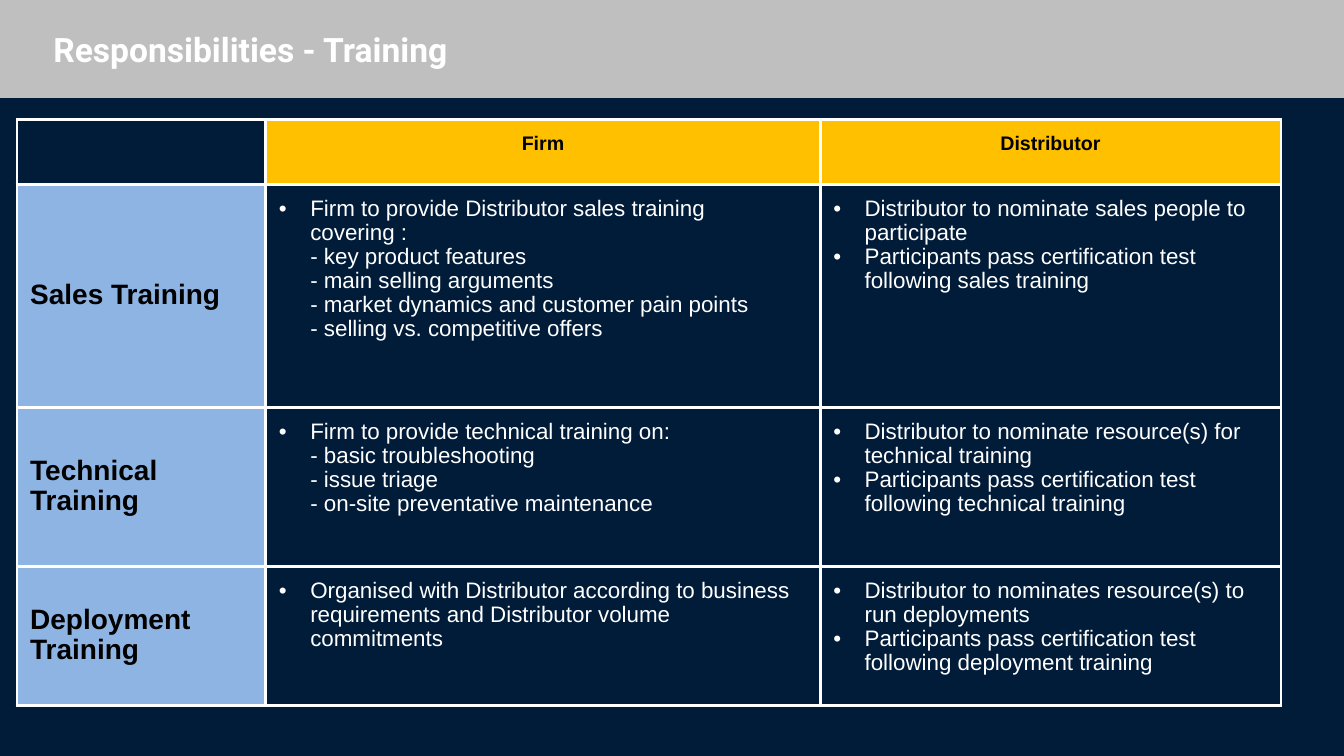
from copy import deepcopy
from pptx import Presentation
from pptx.dml.color import RGBColor
from pptx.enum.shapes import MSO_SHAPE as Shape
from pptx.enum.text import MSO_ANCHOR as Anchor, PP_ALIGN as Align
from pptx.oxml import parse_xml
from pptx.oxml.ns import nsdecls, qn
from pptx.util import Cm, Pt

TITLE = "Responsibilities - Training"
HEADINGS = ["", "Firm", "Distributor"]
TRAININGS = [
    ("Sales Training",
     ["Firm to provide Distributor sales training covering :\v- key product features"
      "\v- main selling arguments\v- market dynamics and customer pain points"
      "\v- selling vs. competitive offers"],
     ["Distributor to nominate sales people to participate",
      "Participants pass certification test following sales training"]),
    ("Technical Training",
     ["Firm to provide technical training on:\v- basic troubleshooting"
      "\v- issue triage\v- on-site preventative maintenance"],
     ["Distributor to nominate resource(s) for technical training",
      "Participants pass certification test following technical training"]),
    ("Deployment Training",
     ["Organised with Distributor according to business requirements "
      "and Distributor volume commitments"],
     ["Distributor to nominates resource(s) to run deployments",
      "Participants pass certification test following deployment training"]),
]
COLORS = {"navy": "001C39", "grey": "BFBFBF", "gold": "FFC000",
          "blue": "8EB4E3", "white": "FFFFFF", "black": "000000"}
COLUMN_WIDTHS = [6.27, 13.97, 11.61]
ROW_HEIGHTS = [1.63, 5.61, 4.01, 3.51]
CELL_MARGIN = Cm(0.33)
BULLET_INDENT = Cm(0.79)


def color(name):
    return RGBColor.from_string(COLORS[name])


def write(frame, lines, size, ink="black", bold=True, font="Arial",
          align=Align.LEFT, spacing=None, bullet=False):
    for index, line in enumerate(lines):
        para = frame.paragraphs[0] if index == 0 else frame.add_paragraph()
        para.text = line
        para.alignment = align
        para.line_spacing = spacing
        if bullet:
            props = para._p.get_or_add_pPr()
            props.set("marL", str(BULLET_INDENT))
            props.set("indent", str(-BULLET_INDENT))
            props.append(parse_xml(f'<a:buClr {nsdecls("a")}><a:srgbClr val="{COLORS[ink]}"/></a:buClr>'))
            props.append(parse_xml(f'<a:buFont {nsdecls("a")} typeface="Arial"/>'))
            props.append(parse_xml(f'<a:buChar {nsdecls("a")} char="•"/>'))
        for span in para.runs:
            span.font.name = font
            span.font.size = Pt(size)
            span.font.bold = bold
            span.font.color.rgb = color(ink)
        for line_break in para._p.findall(qn("a:br")):
            line_break.append(deepcopy(para.runs[0]._r.rPr))


def style_cell(cell, fill=None, anchor=Anchor.TOP):
    cell.margin_left = cell.margin_right = CELL_MARGIN
    cell.margin_top = cell.margin_bottom = CELL_MARGIN
    cell.vertical_anchor = anchor
    props = cell._tc.get_or_add_tcPr()
    for side in ("lnL", "lnR", "lnT", "lnB"):
        props.append(parse_xml(
            f'<a:{side} {nsdecls("a")} w="{Pt(2.25)}"><a:solidFill>'
            f'<a:srgbClr val="{COLORS["white"]}"/></a:solidFill></a:{side}>'))
    if fill:
        cell.fill.solid()
        cell.fill.fore_color.rgb = color(fill)
    else:
        cell.fill.background()


def add_banner(page, width):
    banner = page.shapes.add_shape(Shape.RECTANGLE, 0, 0, width, Cm(2.44))
    banner.shadow.inherit = False
    banner.fill.solid()
    banner.fill.fore_color.rgb = color("grey")
    banner.line.color.rgb = color("grey")
    banner.line.width = Pt(2)
    title = page.shapes.title
    banner._element.addnext(title._element)
    title.left, title.top, title.width, title.height = Cm(1.09), Cm(0.51), Cm(26.31), Cm(1.45)
    title.text_frame.vertical_anchor = Anchor.MIDDLE
    write(title.text_frame, [TITLE], 24, ink="white", font="Roboto")


def add_training_table(page):
    frame = page.shapes.add_table(len(ROW_HEIGHTS), len(COLUMN_WIDTHS), Cm(0.43), Cm(3.02),
                                  Cm(sum(COLUMN_WIDTHS)), Cm(sum(ROW_HEIGHTS)))
    table = frame.table
    table.first_row = table.horz_banding = False
    for column, width in zip(table.columns, COLUMN_WIDTHS):
        column.width = Cm(width)
    for row, height in zip(table.rows, ROW_HEIGHTS):
        row.height = Cm(height)
    for column, heading in enumerate(HEADINGS):
        cell = table.cell(0, column)
        style_cell(cell, "gold" if heading else None)
        if heading:
            write(cell.text_frame, [heading], 14, align=Align.CENTER)
    for row, (name, *duties) in enumerate(TRAININGS, 1):
        cell = table.cell(row, 0)
        style_cell(cell, "blue", Anchor.MIDDLE)
        write(cell.text_frame, [name], 20, spacing=0.96)
        for column, lines in enumerate(duties, 1):
            cell = table.cell(row, column)
            style_cell(cell)
            write(cell.text_frame, lines, 16, ink="white", bold=False,
                  spacing=0.96, bullet=True)


def main():
    deck = Presentation()
    deck.slide_width, deck.slide_height = Cm(33.87), Cm(19.05)
    page = deck.slides.add_slide(deck.slide_layouts[5])
    page.background.fill.solid()
    page.background.fill.fore_color.rgb = color("navy")
    add_banner(page, deck.slide_width)
    add_training_table(page)
    deck.save("out.pptx")


if __name__ == "__main__":
    main()
